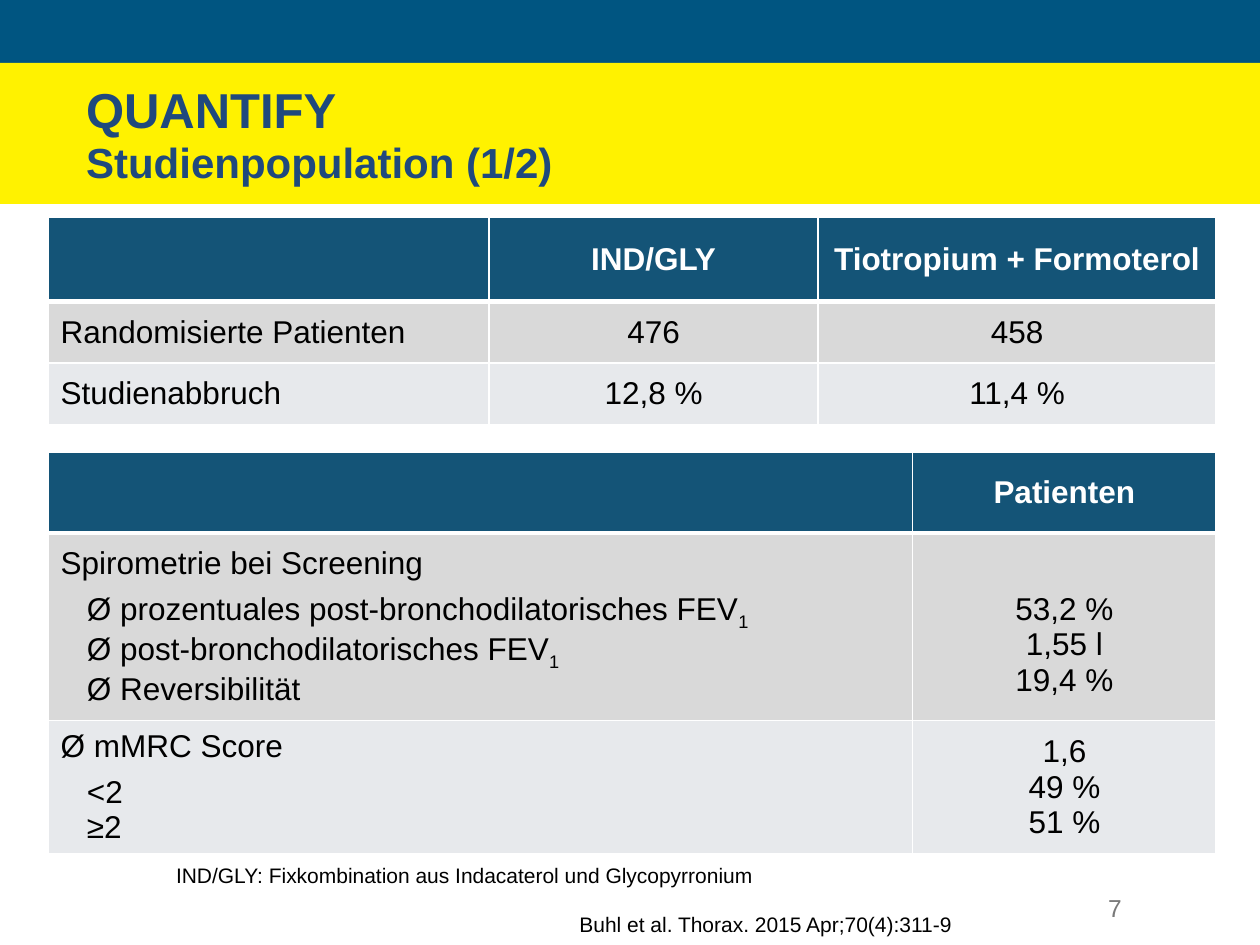
from lxml.etree import SubElement
from pptx import Presentation
from pptx.dml.color import RGBColor
from pptx.enum.shapes import MSO_SHAPE
from pptx.enum.text import MSO_ANCHOR, PP_ALIGN
from pptx.oxml import parse_xml
from pptx.oxml.ns import nsdecls, qn
from pptx.util import Pt

FONT = "Arial"
WHITE = RGBColor(0xFF, 0xFF, 0xFF)
BLACK = RGBColor(0, 0, 0)
GRAY = RGBColor(0x79, 0x79, 0x79)
TITLE_BLUE = RGBColor(0x1F, 0x49, 0x7D)
BAND_BLUE = RGBColor(0x00, 0x55, 0x81)
BAND_YELLOW = RGBColor(0xFF, 0xF2, 0x00)
ROW_FILLS = [RGBColor(0x14, 0x54, 0x77), RGBColor(0xD9, 0xD9, 0xD9), RGBColor(0xE7, 0xE9, 0xEC)]

TITLE = [("QUANTIFY", 28), ("Studienpopulation (1/2)", 24)]
BANDS = [(0, 36, BAND_BLUE), (36, 80.5, BAND_YELLOW)]

# Each cell is a list of lines; "_" marks the start of a subscript.
TABLES = [
    {
        "top": 124, "widths": [252, 188, 227.5], "heights": [48.2, 35.2, 35.2],
        "rows": [
            [[], ["IND/GLY"], ["Tiotropium + Formoterol"]],
            [["Randomisierte Patienten"], ["476"], ["458"]],
            [["Studienabbruch"], ["12,8 %"], ["11,4 %"]],
        ],
    },
    {
        "top": 258.5, "widths": [494, 173.5], "heights": [46, 107.3, 76.3],
        "rows": [
            [[], ["Patienten"]],
            [["Spirometrie bei Screening",
              "Ø prozentuales post-bronchodilatorisches FEV_1",
              "Ø post-bronchodilatorisches FEV_1",
              "Ø Reversibilität"],
             ["53,2 %", "1,55 l", "19,4 %"]],
            [["Ø mMRC Score", "<2", "≥2"], ["1,6", "49 %", "51 %"]],
        ],
    },
]
TABLE_LEFT = 27.5
LINE_HEIGHT = 20.7
INDENT = 15

NOTES = [
    ("Buhl et al. Thorax. 2015 Apr;70(4):311-9", 324, 517.5, 229, 21.8, 12, BLACK, PP_ALIGN.LEFT),
    ("IND/GLY: Fixkombination aus Indacaterol und Glycopyrronium",
     93.5, 489.5, 347, 21.8, 12, BLACK, PP_ALIGN.LEFT),
    ("7", 480, 507, 168, 28.8, 14, GRAY, PP_ALIGN.RIGHT),
]


def style(font, size, color, bold=False):
    font.name, font.size, font.bold = FONT, Pt(size), bold
    font.color.rgb = color


def add_band(slide, top, height, color):
    band = slide.shapes.add_shape(MSO_SHAPE.RECTANGLE, 0, Pt(top), Pt(720), Pt(height))
    band.shadow.inherit = False
    band.fill.solid()
    band.fill.fore_color.rgb = color
    band.line.fill.background()


def set_borders(cell, row):
    widths = {"L": 1, "R": 1, "T": 3 if row == 1 else 1, "B": 3 if row == 0 else 1}
    properties = cell._tc.get_or_add_tcPr()
    for position, (side, width) in enumerate(widths.items()):
        properties.insert(position, parse_xml(
            f'<a:ln{side} {nsdecls("a")} w="{Pt(width)}"><a:solidFill>'
            f'<a:srgbClr val="{WHITE}"/></a:solidFill></a:ln{side}>'))


def fill_cell(cell, lines, row, column, label_lines):
    cell.fill.solid()
    cell.fill.fore_color.rgb = ROW_FILLS[row]
    cell.vertical_anchor = MSO_ANCHOR.MIDDLE
    set_borders(cell, row)
    if row and column:
        cell.margin_top = Pt(3.6 + LINE_HEIGHT * (label_lines - len(lines)))
    frame = cell.text_frame
    for index, line in enumerate(lines):
        paragraph = frame.add_paragraph() if index else frame.paragraphs[0]
        if column:
            paragraph.alignment = PP_ALIGN.CENTER
        elif index:
            paragraph._p.get_or_add_pPr().set("marL", str(Pt(INDENT)))
        elif len(lines) > 1:
            paragraph.space_after = Pt(6)
        base, _, subscript = line.partition("_")
        paragraph.add_run().text = base
        if subscript:
            lowered = paragraph.add_run()
            lowered.text = subscript
            lowered.font._element.set("baseline", "-25000")
        style(paragraph.font, 18, BLACK if row else WHITE, bold=not row)


def add_data_table(slide, content):
    widths, heights, rows = content["widths"], content["heights"], content["rows"]
    table = slide.shapes.add_table(
        len(rows), len(widths), Pt(TABLE_LEFT), Pt(content["top"]),
        Pt(sum(widths)), Pt(sum(heights))).table
    for column, width in zip(table.columns, widths):
        column.width = Pt(width)
    for row, (cells, height) in enumerate(zip(rows, heights)):
        table.rows[row].height = Pt(height)
        for column, lines in enumerate(cells):
            fill_cell(table.cell(row, column), lines, row, column, len(cells[0]))


def add_note(slide, text, left, top, width, height, size, color, alignment):
    frame = slide.shapes.add_textbox(Pt(left), Pt(top), Pt(width), Pt(height)).text_frame
    frame.word_wrap = alignment == PP_ALIGN.RIGHT
    paragraph = frame.paragraphs[0]
    paragraph.text = text
    paragraph.alignment = alignment
    style(paragraph.font, size, color)


def format_title(slide):
    title = slide.shapes.title
    slide.shapes._spTree.append(title._element)
    title.left, title.top, title.width, title.height = Pt(42), Pt(43.2), Pt(653), Pt(67.7)
    frame = title.text_frame
    frame.vertical_anchor = MSO_ANCHOR.BOTTOM
    paragraph = frame.paragraphs[0]
    paragraph.alignment = PP_ALIGN.LEFT
    paragraph.line_spacing = 0.95
    for index, (text, size) in enumerate(TITLE):
        if index:
            paragraph.add_line_break()
            line_break = paragraph._p.findall(qn("a:br"))[-1]
            SubElement(line_break, qn("a:rPr")).set("sz", str(TITLE[index - 1][1] * 100))
        run = paragraph.add_run()
        run.text = text
        style(run.font, size, TITLE_BLUE, bold=True)


def main():
    deck = Presentation()
    deck.slide_width, deck.slide_height = Pt(720), Pt(540)
    slide = deck.slides.add_slide(deck.slide_layouts[5])
    for band in BANDS:
        add_band(slide, *band)
    for content in TABLES:
        add_data_table(slide, content)
    format_title(slide)
    for note in NOTES:
        add_note(slide, *note)
    deck.save("out.pptx")


if __name__ == "__main__":
    main()
